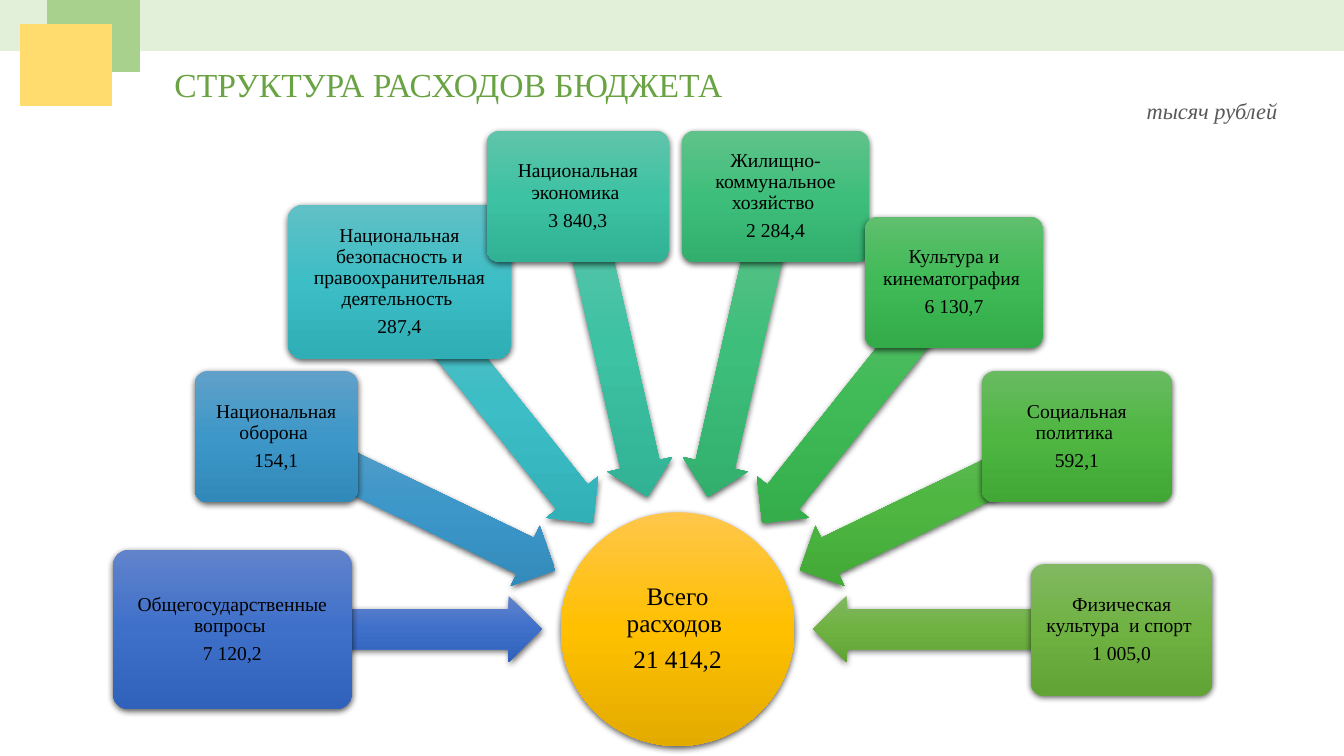
from copy import deepcopy
from dataclasses import dataclass
from math import cos, radians, sin

from lxml.etree import SubElement
from pptx import Presentation
from pptx.dml.color import RGBColor
from pptx.enum.shapes import MSO_SHAPE
from pptx.enum.text import MSO_ANCHOR, MSO_AUTO_SIZE, PP_ALIGN
from pptx.oxml.ns import qn
from pptx.shapes.autoshape import Shape
from pptx.slide import Slide
from pptx.text.text import TextFrame
from pptx.util import Pt


@dataclass(frozen=True)
class Theme:
    font: str = "Times New Roman"
    title: str = "6AA343"
    unit: str = "595959"
    text: str = "000000"
    shadow: str = "000000"
    band: str = "E2F0D9"
    green: str = "A9D18E"
    yellow: str = "FFDC6D"
    total: tuple[str, str, str] = ("FFC64B", "FFC000", "E3AB00")
    title_size: float = 24
    unit_size: float = 16
    total_size: float = 18
    item_size: float = 14


@dataclass(frozen=True)
class Box:
    left: float
    top: float
    width: float
    height: float


@dataclass(frozen=True)
class Expense:
    name: str
    amount: str
    box: Box
    shades: tuple[str, str, str]


THEME = Theme()
HUB_X, HUB_Y, HUB_RADIUS = 484, 449.4, 83.5
ARROW_ORBIT, ARROW_LENGTH, ARROW_WIDTH = 207.5, 221, 47.5

EXPENSES = [
    Expense("Общегосударственные вопросы ", "7 120,2",
            Box(80.7, 392.6, 170.6, 114), ("6183CB", "3E70CA", "3062BB")),
    Expense("Национальная оборона ", "154,1",
            Box(139, 265, 116.6, 93.8), ("61A1C9", "3D97C8", "3089B9")),
    Expense("Национальная безопасность и правоохранительная деятельность ", "287,4",
            Box(205.4, 146.2, 160, 110), ("61C0C6", "3DBDC5", "2FAEB6")),
    Expense("Национальная экономика ", "3 840,3",
            Box(347.6, 93.3, 130.4, 93.8), ("60C4AA", "3DC2A3", "31B294")),
    Expense("Жилищно-коммунальное хозяйство ", "2 284,4",
            Box(487, 93.3, 134, 93.8), ("60C28A", "3EBE7B", "32AE6D")),
    Expense("Культура и кинематография ", "6 130,7",
            Box(617.8, 154.7, 127.4, 93.8), ("60BF6E", "3FBA56", "33AB49")),
    Expense("Социальная политика ", "592,1",
            Box(701.3, 265, 136, 93.8), ("69BB61", "4EB641", "41A735")),
    Expense("Физическая культура  и спорт ", "1 005,0",
            Box(736.4, 403, 129.5, 93.8), ("81B861", "6FB242", "62A336")),
]


def add_shape(slide: Slide, kind: MSO_SHAPE, box: Box) -> Shape:
    sp = slide.shapes.add_shape(
        kind, Pt(box.left), Pt(box.top), Pt(box.width), Pt(box.height))
    sp.shadow.inherit = False
    return sp


def add_plain_rect(slide: Slide, box: Box, color: str) -> None:
    sp = add_shape(slide, MSO_SHAPE.RECTANGLE, box)
    sp.fill.solid()
    sp.fill.fore_color.rgb = RGBColor.from_string(color)
    sp.line.color.rgb = RGBColor.from_string(color)
    sp.line.width = Pt(1)


def add_shaded(slide: Slide, kind: MSO_SHAPE, box: Box,
               shades: tuple[str, str, str]) -> Shape:
    sp = add_shape(slide, kind, box)
    sp.line.fill.background()
    sp.fill.gradient()
    sp.fill.gradient_angle = 270
    props = sp._element.spPr
    gradient = props.find(qn("a:gradFill"))
    gradient.set("rotWithShape", "0")
    stops = gradient.find(qn("a:gsLst"))
    stops.append(deepcopy(stops[0]))
    for stop, position, shade in zip(sp.fill.gradient_stops, (0, 0.5, 1), shades):
        stop.position = position
        stop.color.rgb = RGBColor.from_string(shade)
    shadow = SubElement(
        props.find(qn("a:effectLst")), qn("a:outerShdw"),
        blurRad=str(Pt(4.5)), dist=str(Pt(1.5)), dir="5400000", rotWithShape="0")
    color = SubElement(shadow, qn("a:srgbClr"), val=THEME.shadow)
    SubElement(color, qn("a:alpha"), val="63000")
    return sp


def write_centred(sp: Shape, lines: tuple[str, str], size: float, inset: float) -> None:
    tf = sp.text_frame
    tf.word_wrap = True
    tf.vertical_anchor = MSO_ANCHOR.MIDDLE
    tf.margin_left = tf.margin_right = tf.margin_top = tf.margin_bottom = Pt(inset)
    tf.text = "\n".join(lines)
    for p in tf.paragraphs:
        p.alignment = PP_ALIGN.CENTER
        p.line_spacing = 0.9
        p.space_after = Pt(size * 0.35)
        p.font.name = THEME.font
        p.font.size = Pt(size)
        p.font.color.rgb = RGBColor.from_string(THEME.text)


def write_line(tf: TextFrame, text: str, size: float, color: str,
               italic: bool = False) -> None:
    tf.text = text
    tf.word_wrap = False
    tf.auto_size = MSO_AUTO_SIZE.SHAPE_TO_FIT_TEXT
    tf.vertical_anchor = MSO_ANCHOR.TOP
    p = tf.paragraphs[0]
    p.alignment = PP_ALIGN.LEFT
    p.font.name = THEME.font
    p.font.size = Pt(size)
    p.font.italic = italic
    p.font.color.rgb = RGBColor.from_string(color)


def add_expense(slide: Slide, expense: Expense, angle: float) -> None:
    x = HUB_X + ARROW_ORBIT * cos(radians(angle))
    y = HUB_Y + ARROW_ORBIT * sin(radians(angle))
    arrow = add_shaded(
        slide, MSO_SHAPE.LEFT_ARROW,
        Box(x - ARROW_LENGTH / 2, y - ARROW_WIDTH / 2, ARROW_LENGTH, ARROW_WIDTH),
        expense.shades)
    arrow.adjustments[0] = 0.6
    arrow.adjustments[1] = 0.5
    arrow.rotation = angle % 360
    card = add_shaded(slide, MSO_SHAPE.ROUNDED_RECTANGLE, expense.box, expense.shades)
    card.adjustments[0] = 0.1
    write_centred(card, (expense.name, expense.amount), THEME.item_size, 2)


def main() -> None:
    prs = Presentation()
    prs.slide_width, prs.slide_height = Pt(960), Pt(540)
    slide = prs.slides.add_slide(prs.slide_layouts[5])

    title = slide.shapes.title
    title.left, title.top, title.width, title.height = Pt(117.4), Pt(41.8), Pt(409.7), Pt(36)
    write_line(title.text_frame, "СТРУКТУРА РАСХОДОВ БЮДЖЕТА", THEME.title_size, THEME.title)

    unit = slide.shapes.add_textbox(Pt(812), Pt(66.2), Pt(109.4), Pt(26.6))
    write_line(unit.text_frame, "тысяч рублей", THEME.unit_size, THEME.unit, italic=True)

    add_plain_rect(slide, Box(0, 0, 960, 36), THEME.band)
    add_plain_rect(slide, Box(33.8, 0, 65.5, 51.1), THEME.green)
    add_plain_rect(slide, Box(15.1, 18, 64.8, 57.6), THEME.yellow)

    hub = add_shaded(
        slide, MSO_SHAPE.OVAL,
        Box(HUB_X - HUB_RADIUS, HUB_Y - HUB_RADIUS, 2 * HUB_RADIUS, 2 * HUB_RADIUS),
        THEME.total)
    write_centred(hub, ("Всего расходов ", "21 414,2"), THEME.total_size, 1)

    step = 180 / (len(EXPENSES) - 1)
    for i, expense in enumerate(EXPENSES):
        add_expense(slide, expense, 180 + i * step)

    prs.save("out.pptx")


if __name__ == "__main__":
    main()
